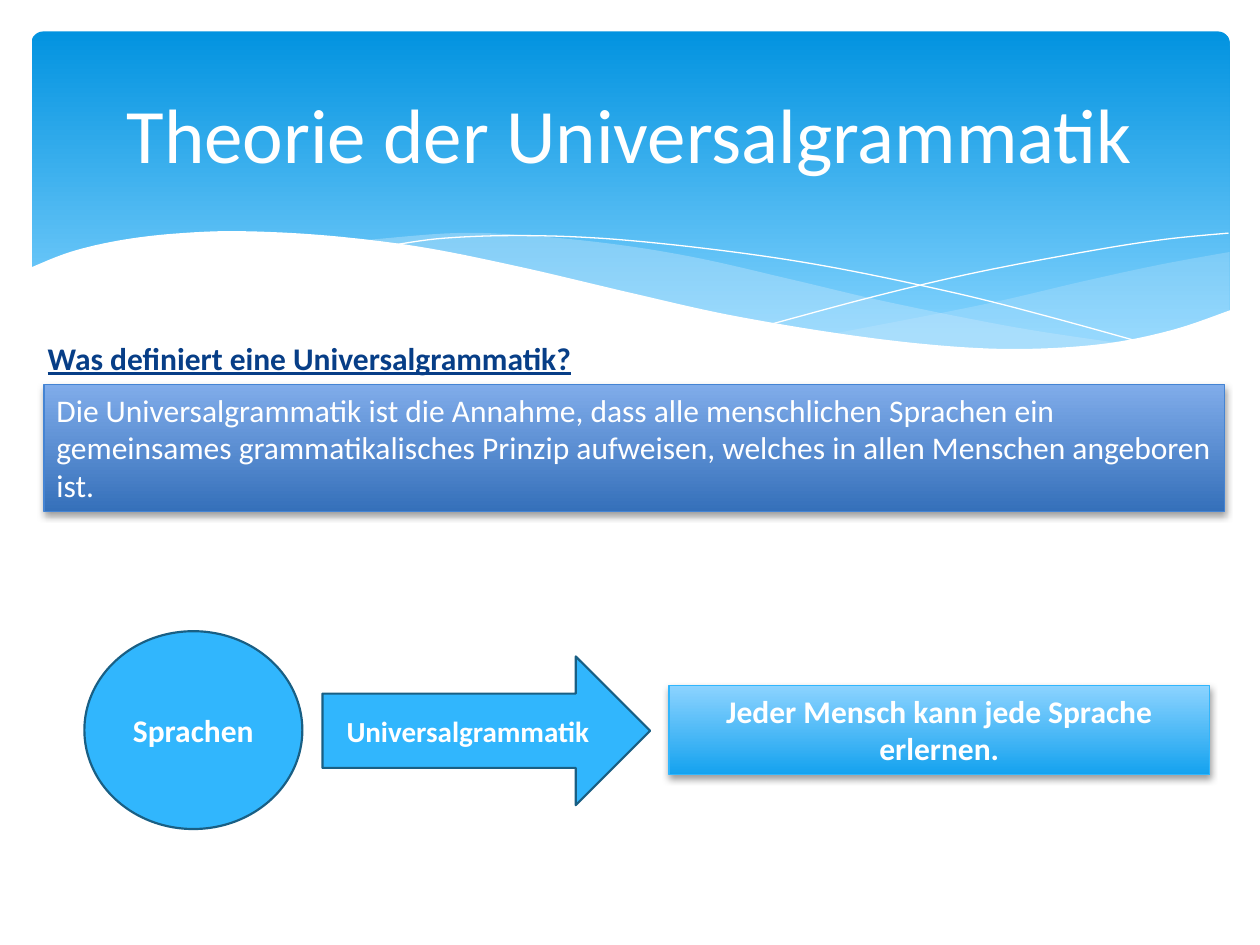
import pptx
import pptx.dml.color
import pptx.enum.shapes
import pptx.enum.text
import pptx.oxml
import pptx.oxml.ns
import pptx.util
from pptx.util import Inches

RGBColor = pptx.dml.color.RGBColor
Shape = pptx.enum.shapes.MSO_SHAPE
Anchor = pptx.enum.text.MSO_ANCHOR
Align = pptx.enum.text.PP_ALIGN
AutoSize = pptx.enum.text.MSO_AUTO_SIZE

WHITE = RGBColor(0xFF, 0xFF, 0xFF)
PALE = RGBColor(0xC6, 0xE7, 0xFC)
NAVY = RGBColor(0x07, 0x3E, 0x87)
SKY = RGBColor(0x31, 0xB6, 0xFD)
SKY_EDGE = RGBColor(0x19, 0x5F, 0x84)
BLUE_EDGE = RGBColor(0x45, 0x84, 0xD3)
BANNER = (RGBColor(0x02, 0x93, 0xE0), RGBColor(0x83, 0xD3, 0xFE))
BLUE_BLEND = (RGBColor(0x80, 0xAC, 0xEA), RGBColor(0x35, 0x70, 0xBA))
SKY_BLEND = (RGBColor(0x8C, 0xD3, 0xFF), RGBColor(0x14, 0xA2, 0xEF))


def write(shape, text, size=18, color=WHITE, bold=False, underline=False,
          align=Align.LEFT, anchor=Anchor.TOP, grow=False):
    frame = shape.text_frame
    frame.word_wrap = True
    frame.vertical_anchor = anchor
    frame.auto_size = AutoSize.SHAPE_TO_FIT_TEXT if grow else AutoSize.NONE
    para = frame.paragraphs[0]
    para.alignment = align
    span = para.add_run()
    span.text = text
    span.font.name = "Calibri"
    span.font.size = pptx.util.Pt(size)
    span.font.bold = bold
    span.font.underline = underline
    span.font.color.rgb = color


def smooth(knots, steps=8):
    """Points of a Catmull-Rom curve through the knots."""
    padded = [knots[0], *knots, knots[-1]]
    points = [knots[0]]
    for a, b, c, d in zip(padded, padded[1:], padded[2:], padded[3:]):
        for step in range(1, steps + 1):
            t = step / steps
            points.append(tuple(
                0.5 * (2 * q + (r - p) * t + (2 * p - 5 * q + 4 * r - s) * t ** 2
                       + (3 * q - p - 3 * r + s) * t ** 3)
                for p, q, r, s in zip(a, b, c, d)))
    return points


class SlideMaker:
    def __init__(self, page):
        self.page = page

    def title(self, text, *place):
        box = self.page.shapes.title
        box.left, box.top, box.width, box.height = map(Inches, place)
        write(box, text, size=44, align=Align.CENTER, anchor=Anchor.MIDDLE)
        box._element.getparent().append(box._element)  # in front of the waves

    def label(self, text, *place, **style):
        write(self.page.shapes.add_textbox(*map(Inches, place)), text, **style)

    def block(self, kind, *place, fill, edge=None, width=1.25, fade_end=1, shadow=False):
        shape = self.page.shapes.add_shape(kind, *map(Inches, place))
        self.paint(shape, fill, edge, width, fade_end)
        if shadow:
            effects = shape._element.spPr.find(pptx.oxml.ns.qn("a:effectLst"))
            effects.append(pptx.oxml.parse_xml(
                f'<a:outerShdw {pptx.oxml.ns.nsdecls("a")} blurRad="50800" dist="25400" '
                'dir="5400000" rotWithShape="0"><a:srgbClr val="000000">'
                '<a:alpha val="38000"/></a:srgbClr></a:outerShdw>'))
        return shape

    def wave(self, *curves, fill=None, edge=None, opacity=100):
        points = [(Inches(x), Inches(y)) for curve in curves for x, y in smooth(curve)]
        builder = self.page.shapes.build_freeform(*points[0])
        builder.add_line_segments(points[1:], close=fill is not None)
        shape = builder.convert_to_shape()
        self.paint(shape, fill, edge, 0)
        if opacity < 100:
            color = shape._element.spPr.find(".//" + pptx.oxml.ns.qn("a:srgbClr"))
            color.append(pptx.oxml.parse_xml(
                f'<a:alpha {pptx.oxml.ns.nsdecls("a")} val="{opacity * 1000}"/>'))

    def paint(self, shape, fill, edge, width, fade_end=1):
        shape.shadow.inherit = False
        if fill is None:
            shape.fill.background()
        elif isinstance(fill, RGBColor):
            shape.fill.solid()
            shape.fill.fore_color.rgb = fill
        else:
            shape.fill.gradient()
            shape.fill.gradient_angle = 270
            for stop, color, position in zip(shape.fill.gradient_stops, fill, (0, fade_end)):
                stop.color.rgb = color
                stop.position = position
        if edge is None:
            shape.line.fill.background()
        else:
            shape.line.color.rgb = edge
            shape.line.width = pptx.util.Pt(width)


def main():
    deck = pptx.Presentation()
    deck.slide_width, deck.slide_height = Inches(10), Inches(7.5)
    maker = SlideMaker(deck.slides.add_slide(deck.slide_layouts[5]))

    # Banner with waves
    banner = maker.block(Shape.ROUNDED_RECTANGLE, 0.25, 0.25, 9.51, 2.7,
                         fill=BANNER, fade_end=0.9)
    banner.adjustments[0] = 0.034
    maker.wave([(9.76, 2), (9.21, 2.1), (8.61, 2.23), (7.79, 2.42), (6.61, 2.65)],
               [(6.61, 2.65), (7.19, 2.72), (7.69, 2.77), (8.14, 2.78), (8.63, 2.75),
                (9.05, 2.69), (9.42, 2.59), (9.76, 2.47)], fill=PALE, opacity=29)
    maker.wave([(8.93, 2.73), (8.07, 2.6), (7.06, 2.4), (6.29, 2.22), (5.55, 2.05),
                (4.89, 1.94), (4.2, 1.87), (3.61, 1.85), (2.86, 1.91)],
               [(2.86, 1.91), (3.62, 2.03), (4.49, 2.22), (5.3, 2.4), (6.01, 2.55),
                (6.65, 2.66), (7.22, 2.74), (7.85, 2.78), (8.38, 2.78), (8.93, 2.73)],
               fill=PALE, opacity=40)
    maker.wave([(3.09, 1.95), (3.53, 1.89), (4.16, 1.87), (4.89, 1.9), (5.82, 2),
                (6.65, 2.13), (7.6, 2.33), (8.31, 2.51), (9.07, 2.72)], edge=WHITE)
    maker.wave([(6.13, 2.57), (6.95, 2.35), (7.76, 2.16), (8.66, 1.99), (9.24, 1.9),
                (9.75, 1.85)], edge=WHITE)
    maker.wave([(9.77, 2.46), (9.3, 2.62), (8.75, 2.73), (8.09, 2.77), (7.44, 2.74),
                (6.68, 2.65), (5.79, 2.5), (5.03, 2.33), (4.18, 2.13), (3.4, 1.97),
                (2.71, 1.88), (2.11, 1.84), (1.61, 1.84), (1.06, 1.89), (0.59, 1.99),
                (0.23, 2.13)],
               [(0.23, 3.29), (9.77, 3.29)], fill=WHITE)
    maker.title("Theorie der Universalgrammatik", 0.5, 0.37, 9, 1.37)

    # Question and definition
    maker.label("Was definiert eine Universalgrammatik?", 0.28, 2.64, 9.45, 0.4,
                color=NAVY, bold=True, underline=True, grow=True)
    definition = maker.block(Shape.RECTANGLE, 0.35, 3.05, 9.37, 1.01, fill=BLUE_BLEND,
                             edge=BLUE_EDGE, width=0.75, shadow=True)
    write(definition, "Die Universalgrammatik ist die Annahme, dass alle menschlichen "
          "Sprachen ein gemeinsames grammatikalisches Prinzip aufweisen, welches in "
          "allen Menschen angeboren ist.", grow=True)

    # From languages through the grammar to the conclusion
    centred = dict(bold=True, align=Align.CENTER)
    arrow = maker.block(Shape.RIGHT_ARROW, 2.56, 5.21, 2.6, 1.18, fill=SKY, edge=SKY_EDGE)
    write(arrow, "Universalgrammatik", size=16.6, anchor=Anchor.MIDDLE, **centred)
    conclusion = maker.block(Shape.RECTANGLE, 5.31, 5.44, 4.29, 0.71, fill=SKY_BLEND,
                             edge=SKY, width=0.75, shadow=True)
    write(conclusion, "Jeder Mensch kann jede Sprache erlernen.", grow=True, **centred)
    languages = maker.block(Shape.OVAL, 0.67, 5.01, 1.73, 1.57, fill=SKY, edge=SKY_EDGE)
    write(languages, "Sprachen", anchor=Anchor.MIDDLE, **centred)

    deck.save("out.pptx")


if __name__ == "__main__":
    main()
